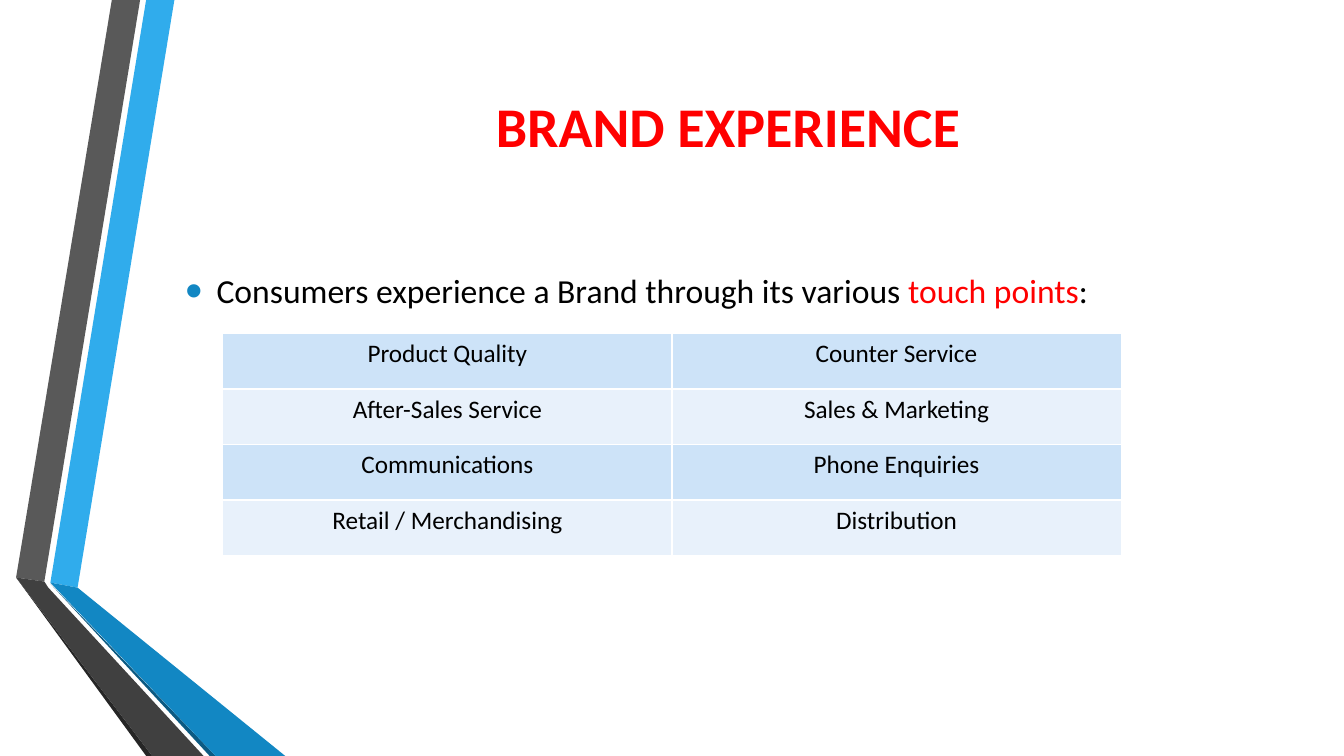
from dataclasses import dataclass

from lxml.etree import SubElement
from pptx import Presentation
from pptx.dml.color import RGBColor
from pptx.enum.text import MSO_ANCHOR, PP_ALIGN
from pptx.oxml.ns import qn
from pptx.slide import Slide
from pptx.table import _Cell as Cell
from pptx.text.text import Font
from pptx.util import Emu, Pt

SCALE = 9144


@dataclass(frozen=True)
class Theme:
    face: str = "Calibri"
    head: int = 40
    body: int = 24
    small: int = 18
    black: str = "000000"
    white: str = "FFFFFF"
    red: str = "FF0000"
    sky: str = "30ACEC"
    blue: str = "1287C3"
    navy: str = "0C5A82"
    gray: str = "595959"
    dark: str = "404040"
    coal: str = "262626"
    bands: tuple[str, str] = ("CDE3F8", "E8F1FB")


THEME = Theme()


@dataclass(frozen=True)
class Band:
    color: str
    points: tuple[tuple[int, int], ...]


@dataclass(frozen=True)
class Box:
    left: int
    top: int
    width: int
    height: int

    def emu(self) -> tuple[Emu, Emu, Emu, Emu]:
        return px(self.left), px(self.top), px(self.width), px(self.height)


BANDS = (
    Band(THEME.sky, ((50, 578), (77, 583), (173, 0), (145, 0))),
    Band(THEME.gray, ((139, 0), (111, 0), (16, 573), (44, 577))),
    Band(THEME.coal, ((16, 573), (145, 750), (151, 750))),
    Band(THEME.navy, ((50, 579), (208, 750), (214, 750))),
    Band(THEME.blue, ((50, 578), (214, 750), (283, 750), (77, 583))),
    Band(THEME.dark, ((202, 750), (48, 583), (44, 577), (16, 573), (151, 750))),
)
TITLE = Box(174, 28, 1096, 192)
LEAD = Box(174, 258, 1096, 60)
GRID = Box(221, 331, 891, 220)
PARTS = (
    ("Consumers experience a Brand through its various ", THEME.black),
    ("touch points", THEME.red),
    (":", THEME.black),
)
POINTS = (
    ("Product Quality", "Counter Service"),
    ("After-Sales Service", "Sales & Marketing"),
    ("Communications", "Phone Enquiries"),
    ("Retail / Merchandising", "Distribution"),
)


def px(count: int) -> Emu:
    return Emu(count * SCALE)


def style(font: Font, size: int, color: str | None = None, bold: bool = False) -> None:
    font.name, font.size, font.bold = THEME.face, Pt(size), bold
    if color:
        font.color.rgb = RGBColor.from_string(color)


def draw_band(slide: Slide, band: Band) -> None:
    first, *rest = band.points
    maker = slide.shapes.build_freeform(*first, scale=SCALE)
    maker.add_line_segments(rest, close=True)
    shape = maker.convert_to_shape()
    shape.shadow.inherit = False
    shape.fill.solid()
    shape.fill.fore_color.rgb = RGBColor.from_string(band.color)
    shape.line.fill.background()


def draw_title(slide: Slide, text: str) -> None:
    title = slide.shapes.title
    title.left, title.top, title.width, title.height = TITLE.emu()
    title.text_frame.text = text
    title.text_frame.vertical_anchor = MSO_ANCHOR.MIDDLE
    line = title.text_frame.paragraphs[0]
    line.alignment = PP_ALIGN.CENTER
    style(line.font, THEME.head, THEME.red, bold=True)


def draw_lead(slide: Slide) -> None:
    frame = slide.shapes.add_textbox(*LEAD.emu()).text_frame
    frame.word_wrap = True
    frame.vertical_anchor = MSO_ANCHOR.MIDDLE
    line = frame.paragraphs[0]
    props = line._p.get_or_add_pPr()
    props.set("marL", str(px(31)))
    props.set("indent", str(px(-31)))
    tint = SubElement(props, qn("a:buClr"))
    SubElement(tint, qn("a:srgbClr"), val=THEME.blue)
    SubElement(props, qn("a:buSzPct"), val="145000")
    SubElement(props, qn("a:buFont"), typeface="Arial")
    SubElement(props, qn("a:buChar"), char="•")
    style(line.font, THEME.body)
    for text, color in PARTS:
        run = line.add_run()
        run.text = text
        run.font.color.rgb = RGBColor.from_string(color)


def draw_cell(cell: Cell, text: str, color: str) -> None:
    props = cell._tc.get_or_add_tcPr()
    for side in ("L", "R", "T", "B"):
        edge = SubElement(props, qn(f"a:ln{side}"), w=str(Pt(1)))
        fill = SubElement(edge, qn("a:solidFill"))
        SubElement(fill, qn("a:srgbClr"), val=THEME.white)
    cell.fill.solid()
    cell.fill.fore_color.rgb = RGBColor.from_string(color)
    cell.text = text
    line = cell.text_frame.paragraphs[0]
    line.alignment = PP_ALIGN.CENTER
    style(line.font, THEME.small, THEME.black)


def draw_grid(slide: Slide) -> None:
    frame = slide.shapes.add_table(len(POINTS), len(POINTS[0]), *GRID.emu())
    table = frame.table
    table.first_row = table.horz_banding = False
    for row, texts in enumerate(POINTS):
        for col, text in enumerate(texts):
            draw_cell(table.cell(row, col), text, THEME.bands[row % 2])


def main() -> None:
    deck = Presentation()
    deck.slide_width, deck.slide_height = px(1333), px(750)
    slide = deck.slides.add_slide(deck.slide_layouts.get_by_name("Title Only"))
    for band in BANDS:
        draw_band(slide, band)
    draw_title(slide, "BRAND EXPERIENCE")
    draw_lead(slide)
    draw_grid(slide)
    deck.save("out.pptx")


if __name__ == "__main__":
    main()
